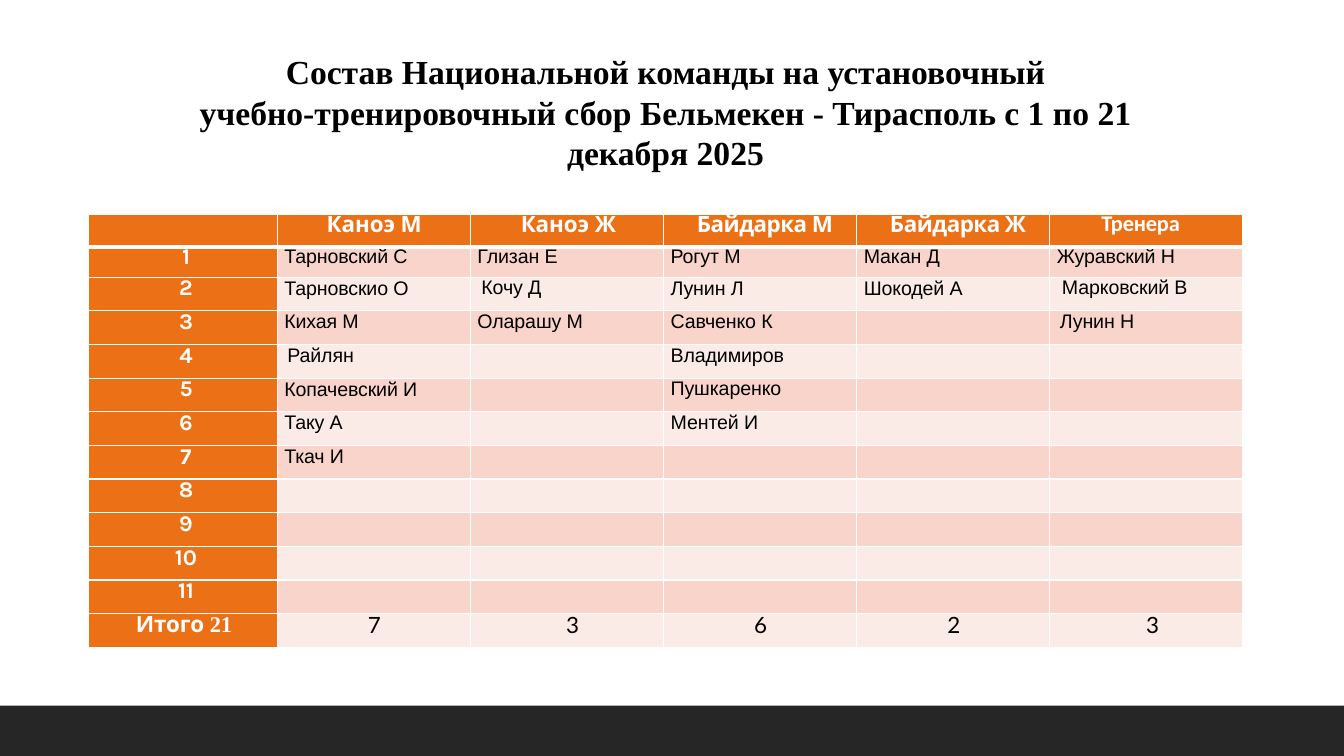
import pptx
import pptx.dml.color
import pptx.enum.shapes
import pptx.enum.text
import pptx.oxml
import pptx.oxml.ns
import pptx.util

Inches, Pt = pptx.util.Inches, pptx.util.Pt
CENTER = pptx.enum.text.PP_ALIGN.CENTER

TITLE = [
    "Состав Национальной команды на установочный",
    "учебно-тренировочный сбор Бельмекен - Тирасполь с 1 по 21 декабря 2025",
]
# heading, left indent, font, letter spacing, members, total, total's indent
GROUPS = [
    ("Каноэ М", 0.49, "Karla", 0,
     ["Тарновский С", "Тарновскио О", "Кихая М", "Райлян", "Копачевский И", "Таку А", "Ткач И"],
     "7", 0.01),
    ("Каноэ Ж", 0.5, "Karla", 0, ["Глизан Е", "Кочу Д", "Оларашу М"], "3", 0.11),
    ("Байдарка М", 0.33, "Karla", -0.3,
     ["Рогут М", "Лунин Л", "Савченко К", "Владимиров", "Пушкаренко", "Ментей И"], "6", 0.01),
    ("Байдарка Ж", 0.33, "Karla", -0.3, ["Макан Д", "Шокодей А"], "2", 0.01),
    ("Тренера", 0.51, "Calibri", -0.1, ["Журавский Н", "Марковский В", "Лунин Н"], "3", 0.12),
]
PLACES = 11
TOTAL_LABEL, TOTAL_COUNT = "Итого ", "21"
# name: left indent, line spacing (None is natural), space before
NUDGES = {
    "Кочу Д": (0.11, 15.2, 0),
    "Марковский В": (0.12, None, 1.2),
    "Лунин Н": (0.1, 15.8, 0),
    "Райлян": (0.1, None, 1.1),
    "Пушкаренко": (0.07, None, 0.7),
}

WHITE, BLACK, ORANGE, BAR = "FFFFFF", "000000", "EC7016", "262626"
BANDS = ["FBEBE7", "F8D4CA"]
WIDTH, HEIGHT = 13.33, 7.5
LABEL_WIDTH, GROUP_WIDTH = 1.87, 1.916
ROW_HEIGHTS = [0.32, 0.3] + [0.334] * PLACES


def rgb(color):
    return pptx.dml.color.RGBColor.from_string(color)


def style(run, font, size, color, bold=False, spacing=0):
    run.font.name, run.font.size, run.font.bold = font, Pt(size), bold
    run.font.color.rgb = rgb(color)
    if spacing:
        run._r.get_or_add_rPr().set("spc", str(round(spacing * 100)))


def paint(cell, fill, bottom=1):
    """Fill the cell, drop its margins and give it white borders."""
    cell.margin_left = cell.margin_right = cell.margin_top = cell.margin_bottom = 0
    properties = cell._tc.get_or_add_tcPr()
    for side, width in (("L", 1), ("R", 1), ("T", 1), ("B", bottom)):
        properties.append(pptx.oxml.parse_xml(
            f'<a:ln{side} {pptx.oxml.ns.nsdecls("a")} w="{Pt(width)}"><a:solidFill>'
            f'<a:srgbClr val="{WHITE}"/></a:solidFill></a:ln{side}>'))
    cell.fill.solid()
    cell.fill.fore_color.rgb = rgb(fill)


def write(cell, text, indent, leading, before=0, align=None, **look):
    paragraph = cell.text_frame.paragraphs[0]
    paragraph.text = text
    paragraph._p.get_or_add_pPr().set("marL", str(Inches(indent)))
    paragraph._p.get_or_add_pPr().set("indent", "0")
    if align is not None:
        paragraph.alignment = align
    if leading:
        paragraph.line_spacing = Pt(leading)
    if before:
        paragraph.space_before = Pt(before)
    style(paragraph.runs[0], **look)
    return paragraph


def add_bar(slide):
    bar = slide.shapes.add_shape(pptx.enum.shapes.MSO_SHAPE.RECTANGLE, 0,
                                 Inches(HEIGHT - 0.5), Inches(WIDTH), Inches(0.5))
    bar.shadow.inherit = False
    bar.fill.solid()
    bar.fill.fore_color.rgb = rgb(BAR)
    bar.line.fill.background()


def add_title(slide):
    frame = slide.shapes.add_textbox(Inches(1.34), Inches(0.46),
                                     Inches(10.52), Inches(1.31)).text_frame
    frame.word_wrap = True
    frame.text = "\n".join(TITLE)
    for paragraph in frame.paragraphs:
        paragraph.alignment = CENTER
        style(paragraph.runs[0], "Times New Roman", 24, BLACK, bold=True)


def add_roster(slide):
    last = PLACES + 1
    table = slide.shapes.add_table(
        last + 1, len(GROUPS) + 1, Inches(0.88), Inches(2.13),
        Inches(LABEL_WIDTH + GROUP_WIDTH * len(GROUPS)), Inches(sum(ROW_HEIGHTS))).table
    table.first_row = table.horz_banding = False
    for index, column in enumerate(table.columns):
        column.width = Inches(GROUP_WIDTH if index else LABEL_WIDTH)
    for index, row in enumerate(table.rows):
        row.height = Inches(ROW_HEIGHTS[index])
        for position, cell in enumerate(row.cells):
            labelled = index == 0 or position == 0
            paint(cell, ORANGE if labelled else BANDS[index % 2], 1 if index else 3)

    label = dict(font="Karla", size=16, color=WHITE, bold=True)
    for place in range(1, last):
        write(table.cell(place, 0), str(place), 0.06, 16.4 if place == 1 else 17.5,
              align=CENTER, **label)
    total = write(table.cell(last, 0), TOTAL_LABEL, 0.02, 17.6, align=CENTER, **label)
    count = total.add_run()
    count.text = TOTAL_COUNT
    style(count, "Times New Roman", 16, WHITE, bold=True)

    for column, group in enumerate(GROUPS, 1):
        heading, indent, font, spacing, members, members_total, total_indent = group
        write(table.cell(0, column), heading, indent, 16.6,
              font=font, size=16, color=WHITE, bold=True, spacing=spacing)
        for place, name in enumerate(members, 1):
            usual = (0.07, 15.1 if place == 1 else 15.9, 0)
            write(table.cell(place, column), name, *NUDGES.get(name, usual),
                  font="Arial", size=14, color=BLACK, spacing=-0.1)
        write(table.cell(last, column), members_total, total_indent, 17.6, align=CENTER,
              font="Lato", size=16, color=BLACK)


def main():
    deck = pptx.Presentation()
    deck.slide_width, deck.slide_height = Inches(WIDTH), Inches(HEIGHT)
    slide = deck.slides.add_slide(deck.slide_layouts[6])
    add_bar(slide)
    add_roster(slide)
    add_title(slide)
    deck.save("out.pptx")


if __name__ == "__main__":
    main()
